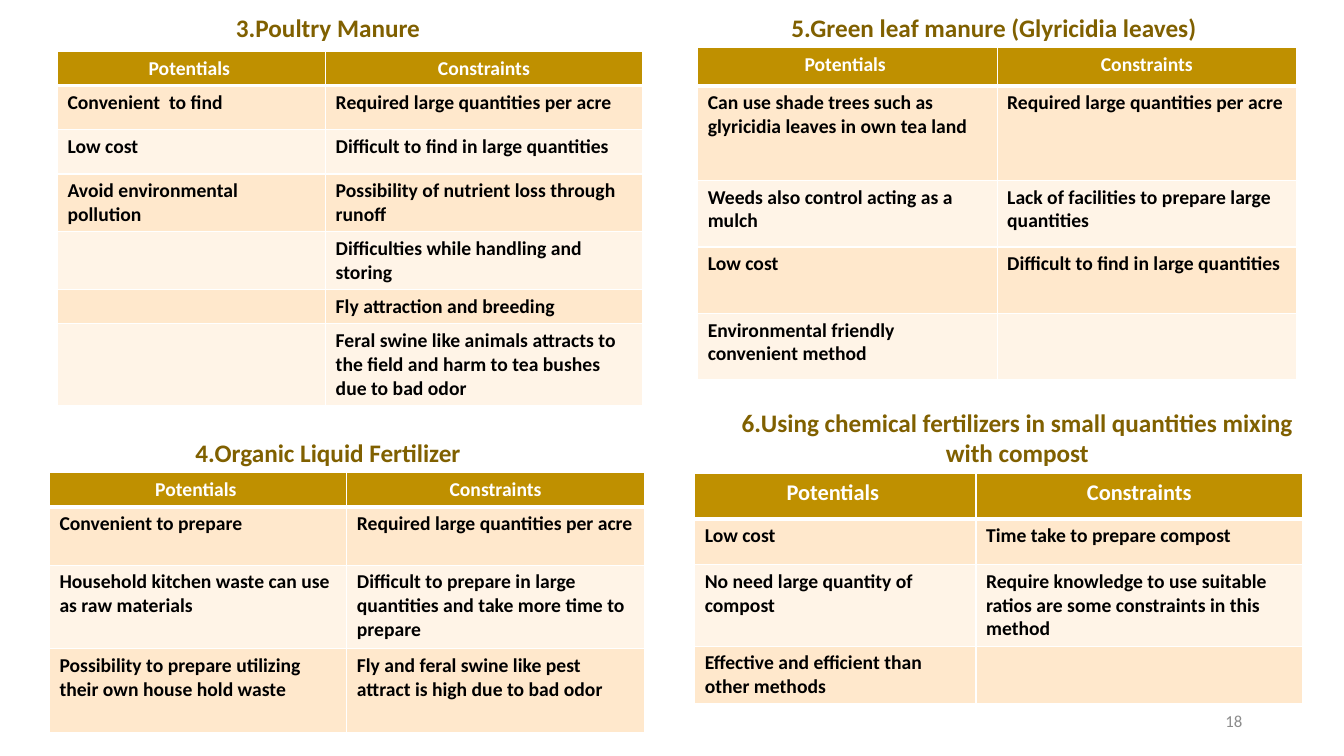
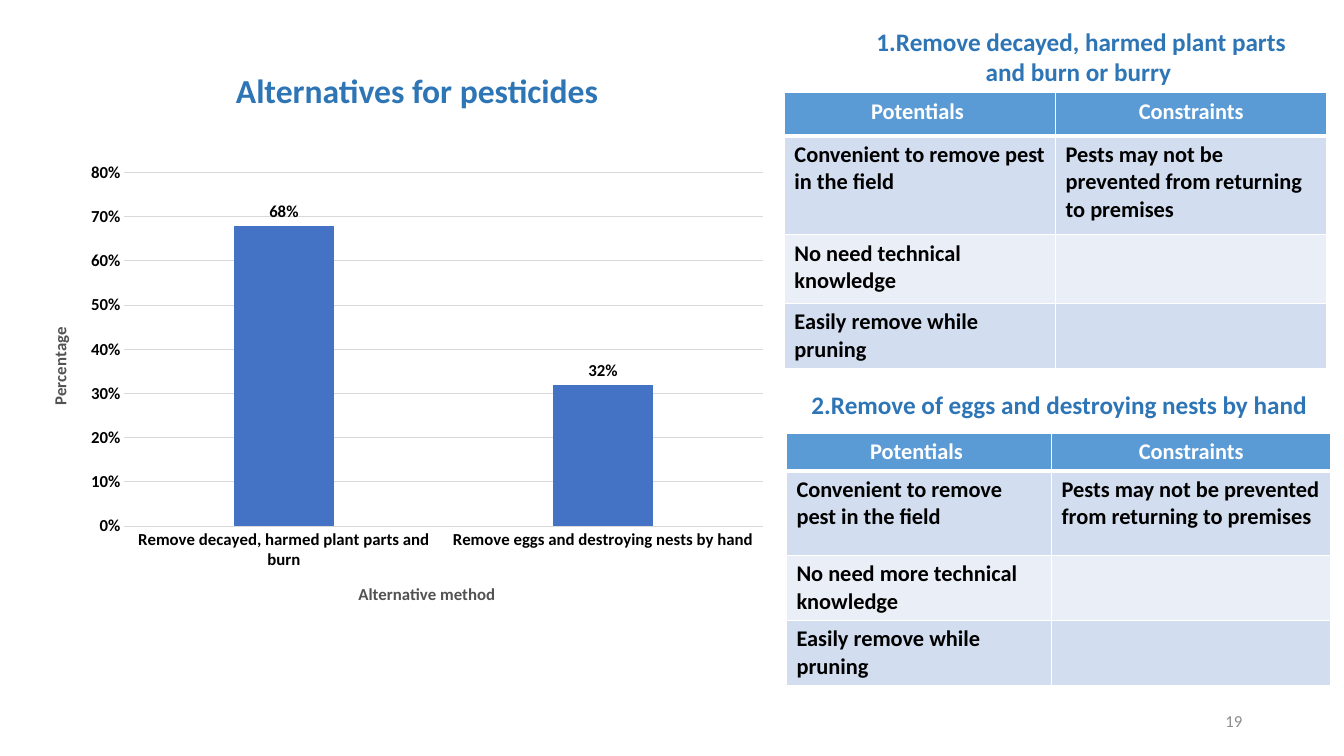
from dataclasses import dataclass

from lxml.etree import SubElement
from pptx import Presentation
from pptx.chart.data import CategoryChartData
from pptx.dml.color import RGBColor
from pptx.enum.chart import XL_CHART_TYPE, XL_LABEL_POSITION, XL_TICK_MARK
from pptx.enum.text import MSO_ANCHOR, MSO_AUTO_SIZE, PP_ALIGN
from pptx.oxml.ns import qn
from pptx.util import Inches, Pt

FONT = "Calibri"
WHITE, BLACK, GREY = "FFFFFF", "000000", "8C8C8C"
AXIS, GRID, BAR = "525252", "D9D9D9", "4472C4"
HEADS = ("Potentials ", "Constraints")
LEFT, MID, RIGHT = PP_ALIGN.LEFT, PP_ALIGN.CENTER, PP_ALIGN.RIGHT

Box = tuple[float, float, float, float]


@dataclass(frozen=True)
class Theme:
    title: str
    head: str
    dark: str
    light: str


@dataclass(frozen=True)
class Panel:
    title: str
    box: Box
    spot: tuple[float, float]
    cols: tuple[float, float]
    rows: tuple[float, ...]
    cells: tuple[tuple[str, str], ...]
    align: PP_ALIGN = LEFT
    size: int = 14
    top: int = 14


GOLD = Theme("806000", "BF9000", "FFE8CC", "FFF4E7")
BLUE = Theme("2E75B6", "5B9BD5", "D2DEEF", "EAEFF7")

MANURE = (
    Panel(
        "3.Poultry Manure", (2.24, 0.07, 2.52, 0.4), (0.57, 0.51),
        (2.66, 3.14), (0.3, 0.44, 0.44, 0.53, 0.51, 0.3, 0.73),
        (
            ("Convenient  to find", "Required large quantities per acre"),
            ("Low cost", "Difficult to find in large quantities"),
            ("Avoid environmental pollution",
             "Possibility of nutrient loss through runoff"),
            ("", "Difficulties while handling and storing"),
            ("", "Fly attraction and breeding"),
            ("", "Feral swine like animals attracts to the field and harm "
                 "to tea bushes due to bad odor"),
        ),
    ),
    Panel(
        "4.Organic Liquid Fertilizer", (1.84, 4.29, 3.31, 0.4), (0.49, 4.69),
        (2.95, 2.95), (0.33, 0.58, 0.83, 0.83),
        (
            ("Convenient to prepare", "Required large quantities per acre"),
            ("Household kitchen waste can use as raw materials",
             "Difficult to prepare in large quantities and take more time "
             "to prepare"),
            ("Possibility to prepare utilizing their own house hold waste",
             "Fly and feral swine like pest attract is high due to bad odor"),
        ),
    ),
    Panel(
        "5.Green leaf manure (Glyricidia leaves)", (7.75, 0.07, 4.68, 0.4),
        (6.92, 0.47), (2.97, 2.97), (0.38, 0.94, 0.66, 0.66, 0.66),
        (
            ("Can use shade trees such as glyricidia leaves in own tea land",
             "Required large quantities per acre"),
            ("Weeds also control acting as a mulch",
             "Lack of facilities to prepare large quantities"),
            ("Low cost", "Difficult to find in large quantities"),
            ("Environmental friendly convenient method", ""),
        ),
    ),
    Panel(
        "6.Using chemical fertilizers in small quantities mixing with compost",
        (7.14, 3.99, 5.9, 0.71), (6.89, 4.7),
        (2.79, 3.24), (0.45, 0.45, 0.78, 0.57),
        (
            ("Low cost", "Time take to prepare compost"),
            ("No need large quantity of compost",
             "Require knowledge to use suitable ratios are some constraints "
             "in this method"),
            ("Effective and efficient than other methods", ""),
        ),
        align=MID, top=16,
    ),
)

PEST = "Convenient to remove pest in the field"
RETURN = "Pests may not be prevented from returning to premises"
PRUNE = "Easily remove while pruning"

PESTS = (
    Panel(
        "1.Remove decayed, harmed plant parts and burn or burry ",
        (8.51, 0.21, 4.43, 0.71), (7.78, 0.92),
        (2.69, 2.69), (0.43, 0.98, 0.68, 0.43),
        ((PEST, RETURN), ("No need technical knowledge", ""), (PRUNE, "")),
        align=MID, size=16, top=16,
    ),
    Panel(
        "2.Remove of eggs and destroying nests by hand",
        (7.95, 3.81, 5.21, 0.4), (7.8, 4.3),
        (2.63, 2.77), (0.34, 0.84, 0.59, 0.59),
        ((PEST, RETURN), ("No need more technical knowledge", ""), (PRUNE, "")),
        size=16, top=16,
    ),
)


def paint(part, color: str) -> None:
    """Give a fill a solid colour."""
    part.solid()
    part.fore_color.rgb = RGBColor.from_string(color)


def style(font, size: float, color: str, bold: bool = True) -> None:
    font.name, font.size, font.bold = FONT, Pt(size), bold
    font.color.rgb = RGBColor.from_string(color)


def write(frame, text: str, *, size: float = 18, color: str = BLACK,
          bold: bool = True, align: PP_ALIGN = LEFT,
          space: float | None = None) -> None:
    """Fill a text frame; an empty text still sets the line height."""
    line = frame.paragraphs[0]
    line.alignment = align
    if space:
        line.line_spacing = space
    if text:
        run = line.add_run()
        run.text = text
        style(run.font, size, color, bold)
    else:
        SubElement(line._p, qn("a:endParaRPr"), sz=str(size * 100))


def place(shape, box: Box, anchor: MSO_ANCHOR):
    """Move a text shape and return its text frame."""
    shape.left, shape.top, shape.width, shape.height = map(Inches, box)
    frame = shape.text_frame
    frame.word_wrap = True
    frame.auto_size = MSO_AUTO_SIZE.NONE
    frame.vertical_anchor = anchor
    return frame


def label(slide, box: Box, text: str, *, anchor: MSO_ANCHOR = MSO_ANCHOR.TOP,
          **form) -> None:
    shape = slide.shapes.add_textbox(*map(Inches, box))
    write(place(shape, box, anchor), text, **form)


def title(slide, box: Box, text: str, *, anchor: MSO_ANCHOR = MSO_ANCHOR.TOP,
          **form) -> None:
    write(place(slide.shapes.title, box, anchor), text, **form)


def edge(cell, row: int) -> None:
    """Draw white borders, thick between the head row and the body."""
    props = cell._tc.get_or_add_tcPr()
    thick = {("B", 0), ("T", 1)}
    for side in "LRTB":
        width = Pt(3 if (side, row) in thick else 1)
        line = SubElement(props, qn(f"a:ln{side}"), w=str(width))
        fill = SubElement(line, qn("a:solidFill"))
        SubElement(fill, qn("a:srgbClr"), val=WHITE)


def grid(slide, panel: Panel, theme: Theme) -> None:
    size = sum(panel.cols), sum(panel.rows)
    table = slide.shapes.add_table(
        len(panel.rows), len(panel.cols),
        *map(Inches, panel.spot + size)).table
    for col, width in zip(table.columns, panel.cols):
        col.width = Inches(width)
    for row, height in zip(table.rows, panel.rows):
        row.height = Inches(height)
    for i, texts in enumerate((HEADS, *panel.cells)):
        for j, text in enumerate(texts):
            cell = table.cell(i, j)
            edge(cell, i)
            if i == 0:
                paint(cell.fill, theme.head)
                write(cell.text_frame, text, size=panel.top, color=WHITE,
                      align=MID)
            else:
                paint(cell.fill, theme.dark if i % 2 else theme.light)
                write(cell.text_frame, text, size=panel.size)


def frame_plot(chart, x: float, y: float, w: float, h: float) -> None:
    """Fix the inner plot area, in fractions of the chart."""
    area = chart.element.find(".//" + qn("c:plotArea"))
    for old in area.findall(qn("c:layout")):
        area.remove(old)
    layout = SubElement(area, qn("c:layout"))
    area.insert(0, layout)
    manual = SubElement(layout, qn("c:manualLayout"))
    for tag, val in (("layoutTarget", "inner"), ("xMode", "edge"),
                     ("yMode", "edge"), ("x", x), ("y", y), ("w", w), ("h", h)):
        SubElement(manual, qn(f"c:{tag}"), val=str(val))


def graph(slide, box: Box) -> None:
    data = CategoryChartData(number_format="0%")
    data.categories = ("Remove decayed, harmed plant parts and burn",
                       "Remove eggs and destroying nests by hand")
    data.add_series("Series 1", (0.68, 0.32))
    chart = slide.shapes.add_chart(
        XL_CHART_TYPE.COLUMN_CLUSTERED, *map(Inches, box), data).chart
    chart.has_legend = chart.has_title = False
    style(chart.font, 10, BLACK, False)
    frame_plot(chart, 0.13, 0.03, 0.82, 0.74)

    plot = chart.plots[0]
    plot.gap_width, plot.overlap = 219, -27
    plot.vary_by_categories = False
    paint(plot.series[0].format.fill, BAR)
    plot.has_data_labels = True
    marks = plot.data_labels
    marks.show_value = True
    marks.position = XL_LABEL_POSITION.OUTSIDE_END
    marks.number_format, marks.number_format_is_linked = "0%", False
    style(marks.font, 12, BLACK)

    base, side = chart.category_axis, chart.value_axis
    for axis, name in ((base, "Alternative method"), (side, "Percentage")):
        axis.major_tick_mark = axis.minor_tick_mark = XL_TICK_MARK.NONE
        style(axis.tick_labels.font, 12, BLACK)
        write(axis.axis_title.text_frame, name, size=12, color=AXIS, align=MID)
    side.minimum_scale, side.maximum_scale, side.major_unit = 0, 0.8, 0.1
    side.tick_labels.number_format = "0%"
    side.tick_labels.number_format_is_linked = False
    side.format.line.fill.background()
    for line in (base.format.line, side.major_gridlines.format.line):
        paint(line.fill, GRID)
        line.width = Pt(0.75)


def start(deck, page: int):
    """Add a slide with its page number."""
    slide = deck.slides.add_slide(deck.slide_layouts[5])
    label(slide, (9.42, 6.95, 3, 0.4), str(page), anchor=MSO_ANCHOR.MIDDLE,
          size=12, color=GREY, bold=False, align=RIGHT)
    return slide


def main() -> None:
    deck = Presentation()
    deck.slide_width, deck.slide_height = Inches(13.33), Inches(7.5)

    slide = start(deck, 18)
    for i, panel in enumerate(MANURE):
        put = label if i else title
        put(slide, panel.box, panel.title, color=GOLD.title, align=panel.align)
        grid(slide, panel, GOLD)

    slide = start(deck, 19)
    title(slide, (2.24, 0.56, 3.92, 0.71), "Alternatives for pesticides",
          anchor=MSO_ANCHOR.MIDDLE, size=24, color=BLUE.title, space=0.9)
    graph(slide, (0.23, 1.57, 7.72, 4.74))
    for panel in PESTS:
        label(slide, panel.box, panel.title, color=BLUE.title,
              align=panel.align)
        grid(slide, panel, BLUE)

    deck.save("out.pptx")


if __name__ == "__main__":
    main()
